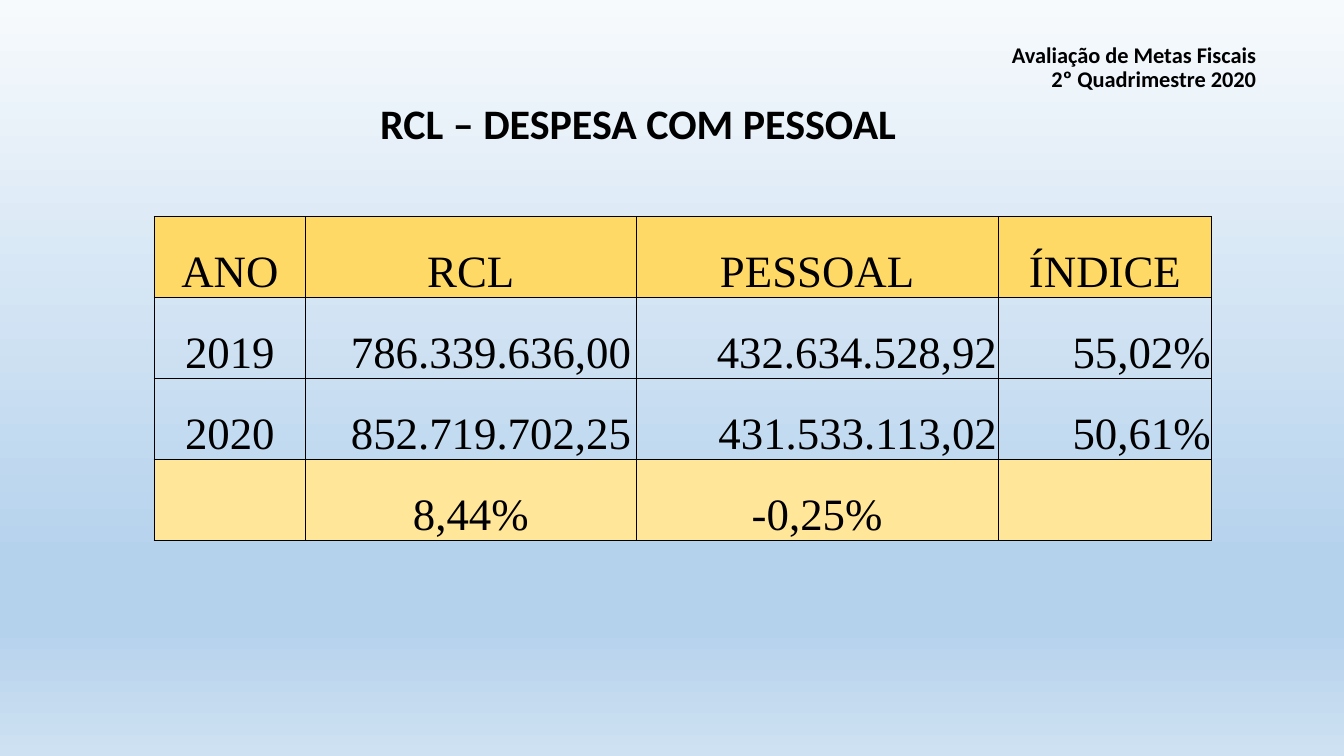
from copy import deepcopy
from lxml import etree
from pptx import Presentation
from pptx.dml.color import RGBColor
from pptx.enum import text as t
from pptx.oxml import ns
from pptx.util import Inches, Pt

BLACK = RGBColor(0, 0, 0)
GOLD = RGBColor(0xFF, 0xD9, 0x66)
CREAM = RGBColor(0xFF, 0xE6, 0x99)
SKY = [
    (0, RGBColor(0xF7, 0xFA, 0xFD)),
    (0.74, RGBColor(0xB5, 0xD2, 0xEC)),
    (0.83, RGBColor(0xB5, 0xD2, 0xEC)),
    (1, RGBColor(0xCE, 0xE1, 0xF2)),
]
LEFT, MID, RIGHT = t.PP_ALIGN.LEFT, t.PP_ALIGN.CENTER, t.PP_ALIGN.RIGHT
ROWS = [
    ("ANO", "RCL", "PESSOAL", "ÍNDICE"),
    ("2019", "786.339.636,00", "432.634.528,92", "55,02%"),
    ("2020", "852.719.702,25", "431.533.113,02", "50,61%"),
    ("", "8,44%", "-0,25%", ""),
]
FILLS = [GOLD, None, None, CREAM]
ALIGNS = [MID, LEFT, RIGHT, RIGHT]
COLS = [1.5, 3.28, 3.59, 2.12]


def style(par, font, size, align, bold=False):
    par.alignment = align
    for run in par.runs:
        run.font.name = font
        run.font.size = Pt(size)
        run.font.bold = bold
        run.font.color.rgb = BLACK


def paint(slide):
    fill = slide.background.fill
    fill.gradient()
    fill.gradient_angle = 270
    stops = fill.gradient_stops
    first = stops[0]._gs
    for _ in range(len(SKY) - len(stops)):
        first.addnext(deepcopy(first))
    for stop, (pos, color) in zip(fill.gradient_stops, SKY):
        stop.position = pos
        stop.color.rgb = color


def place(shape, box):
    shape.left, shape.top, shape.width, shape.height = map(Inches, box)


def header(slide, box):
    title = slide.shapes.title
    place(title, box)
    frame = title.text_frame
    frame.text = "Avaliação de Metas Fiscais\v2º Quadrimestre 2020"
    frame.word_wrap = True
    frame.auto_size = t.MSO_AUTO_SIZE.NONE
    frame.vertical_anchor = t.MSO_ANCHOR.BOTTOM
    par = frame.paragraphs[0]
    par.line_spacing = 0.9
    style(par, "Calibri", 16, RIGHT, True)


def heading(slide, box):
    frame = slide.shapes.add_textbox(*map(Inches, box)).text_frame
    frame.word_wrap = True
    frame.text = "RCL – DESPESA COM PESSOAL"
    par = frame.paragraphs[0]
    par.line_spacing = 0.9
    par.space_before = Pt(10)
    style(par, "Calibri", 30, MID, True)


def border(cell):
    props = cell._tc.get_or_add_tcPr()
    for i, side in enumerate(("lnL", "lnR", "lnT", "lnB")):
        line = etree.Element(ns.qn("a:" + side), w=str(Pt(1)))
        solid = etree.SubElement(line, ns.qn("a:solidFill"))
        etree.SubElement(solid, ns.qn("a:srgbClr"), val=str(BLACK))
        props.insert(i, line)


def fit(cell, value, align, color):
    cell.margin_left = Inches(0.45 if align == LEFT else 0.01)
    cell.margin_right = cell.margin_top = Inches(0.01)
    cell.margin_bottom = 0
    cell.vertical_anchor = t.MSO_ANCHOR.BOTTOM
    cell.text_frame.text = value
    style(cell.text_frame.paragraphs[0], "Times New Roman", 32, align)
    if color is None:
        cell.fill.background()
    else:
        cell.fill.solid()
        cell.fill.fore_color.rgb = color
    border(cell)


def grid(slide, box):
    table = slide.shapes.add_table(len(ROWS), len(COLS), *map(Inches, box)).table
    table.first_row = table.horz_banding = False
    for col, width in zip(table.columns, COLS):
        col.width = Inches(width)
    for r, (row, color) in enumerate(zip(ROWS, FILLS)):
        for c, value in enumerate(row):
            align = ALIGNS[c] if color is None else MID
            fit(table.cell(r, c), value, align, color)


def main():
    deck = Presentation()
    deck.slide_width = Inches(13.33)
    deck.slide_height = Inches(7.5)
    slide = deck.slides.add_slide(deck.slide_layouts[5])
    paint(slide)
    header(slide, (1.67, 0.33, 10.89, 0.64))
    grid(slide, (1.53, 2.15, sum(COLS), 3.21))
    heading(slide, (1.33, 0.97, 10, 0.81))
    deck.save("out.pptx")


if __name__ == "__main__":
    main()
